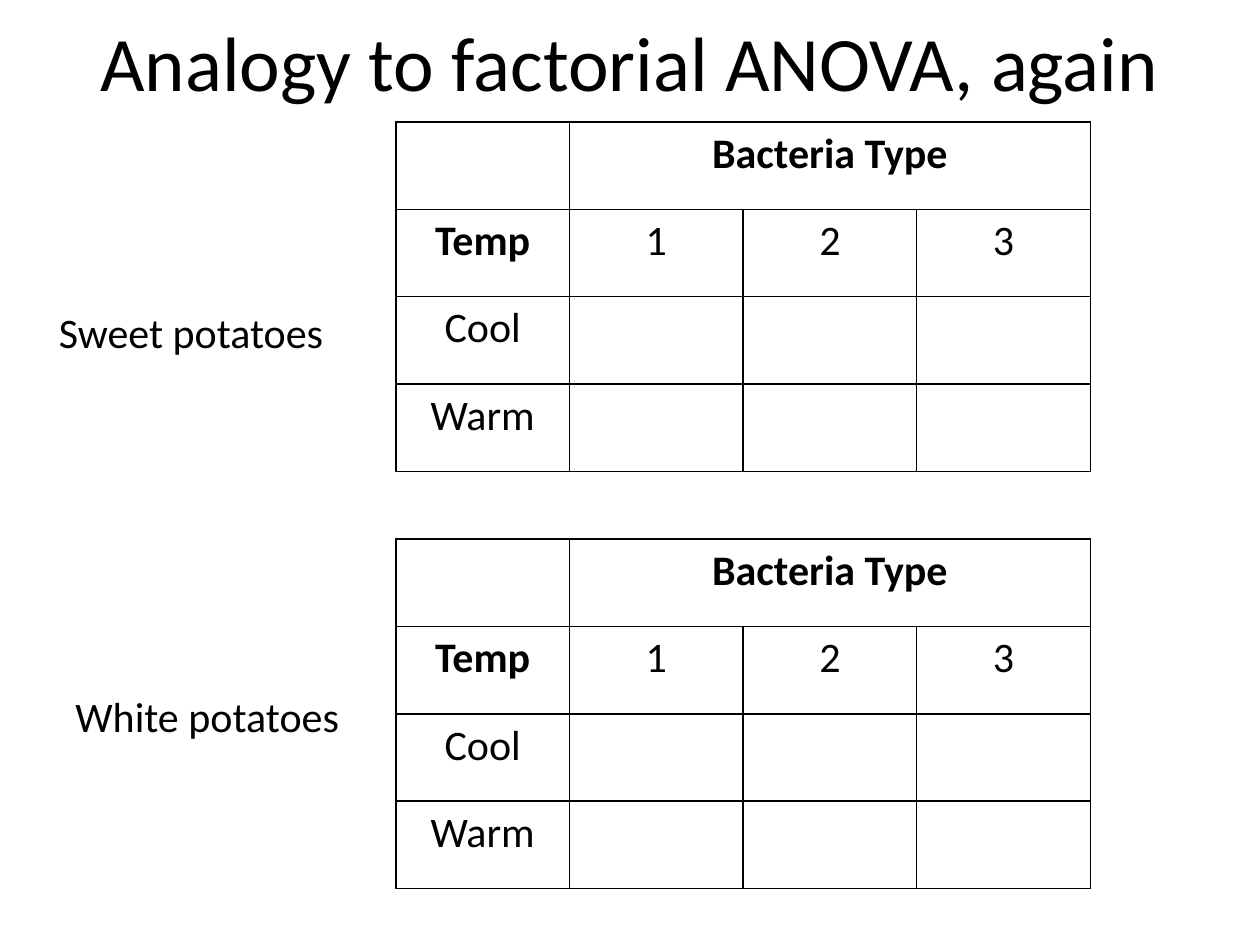
from lxml.etree import SubElement
from pptx import Presentation
from pptx.dml.color import RGBColor
from pptx.enum.text import MSO_ANCHOR, PP_ALIGN
from pptx.oxml.ns import qn
from pptx.util import Cm, Pt

COLORS = {"ink": "000000", "paper": "FFFFFF"}
FONT = "Calibri"
COLUMN_WIDTH, ROW_HEIGHT = Cm(3.5), Cm(1.76)
TABLE_LEFT = Cm(7.98)
DESIGN = [
    ["", "Bacteria Type", "", ""],
    ["Temp", "1", "2", "3"],
    ["Cool", "", "", ""],
    ["Warm", "", "", ""],
]
HEADINGS = {"Bacteria Type", "Temp"}


def write(frame, text, size=24, bold=False, align=PP_ALIGN.LEFT):
    paragraph = frame.paragraphs[0]
    paragraph.alignment = align
    run = paragraph.add_run()
    run.text = text
    run.font.name = FONT
    run.font.size = Pt(size)
    run.font.bold = bold
    run.font.color.rgb = RGBColor.from_string(COLORS["ink"])


def add_label(slide, text, left, top, width, height, wrap=False, **text_format):
    frame = slide.shapes.add_textbox(left, top, width, height).text_frame
    frame.word_wrap = wrap
    frame.vertical_anchor = MSO_ANCHOR.MIDDLE
    write(frame, text, **text_format)


def style_cell(cell):
    # Borders must come before the fill in the cell properties
    properties = cell._tc.get_or_add_tcPr()
    for side in ("a:lnL", "a:lnR", "a:lnT", "a:lnB"):
        border = SubElement(properties, qn(side), w=str(Pt(1)))
        fill = SubElement(border, qn("a:solidFill"))
        SubElement(fill, qn("a:srgbClr"), val=COLORS["ink"])
    cell.fill.background()


def add_design_table(slide, top):
    rows, columns = len(DESIGN), len(DESIGN[0])
    table = slide.shapes.add_table(
        rows, columns, TABLE_LEFT, top, COLUMN_WIDTH * columns, ROW_HEIGHT * rows
    ).table
    table.first_row = table.horz_banding = False
    for column in table.columns:
        column.width = COLUMN_WIDTH
    for row, texts in zip(table.rows, DESIGN):
        row.height = ROW_HEIGHT
        for cell, text in zip(row.cells, texts):
            style_cell(cell)
            if text:
                write(cell.text_frame, text, bold=text in HEADINGS, align=PP_ALIGN.CENTER)
    table.cell(0, 1).merge(table.cell(0, columns - 1))


def main():
    presentation = Presentation()
    presentation.slide_width, presentation.slide_height = Cm(25.4), Cm(19.05)
    slide = presentation.slides.add_slide(presentation.slide_layouts[6])
    slide.background.fill.solid()
    slide.background.fill.fore_color.rgb = RGBColor.from_string(COLORS["paper"])

    # Title
    add_label(slide, "Analogy to factorial ANOVA, again", Cm(1.27), Cm(0), Cm(22.86),
              Cm(2.46), wrap=True, size=44, align=PP_ALIGN.CENTER)

    # One factorial design per kind of potato
    for potato, label_left, label_top, table_top in (
        ("Sweet potatoes", Cm(0.94), Cm(6.05), Cm(2.46)),
        ("White potatoes", Cm(1.27), Cm(13.8), Cm(10.87)),
    ):
        add_design_table(slide, table_top)
        add_label(slide, potato, label_left, label_top, Cm(5.89), Cm(1.27))

    presentation.save("out.pptx")


if __name__ == "__main__":
    main()
